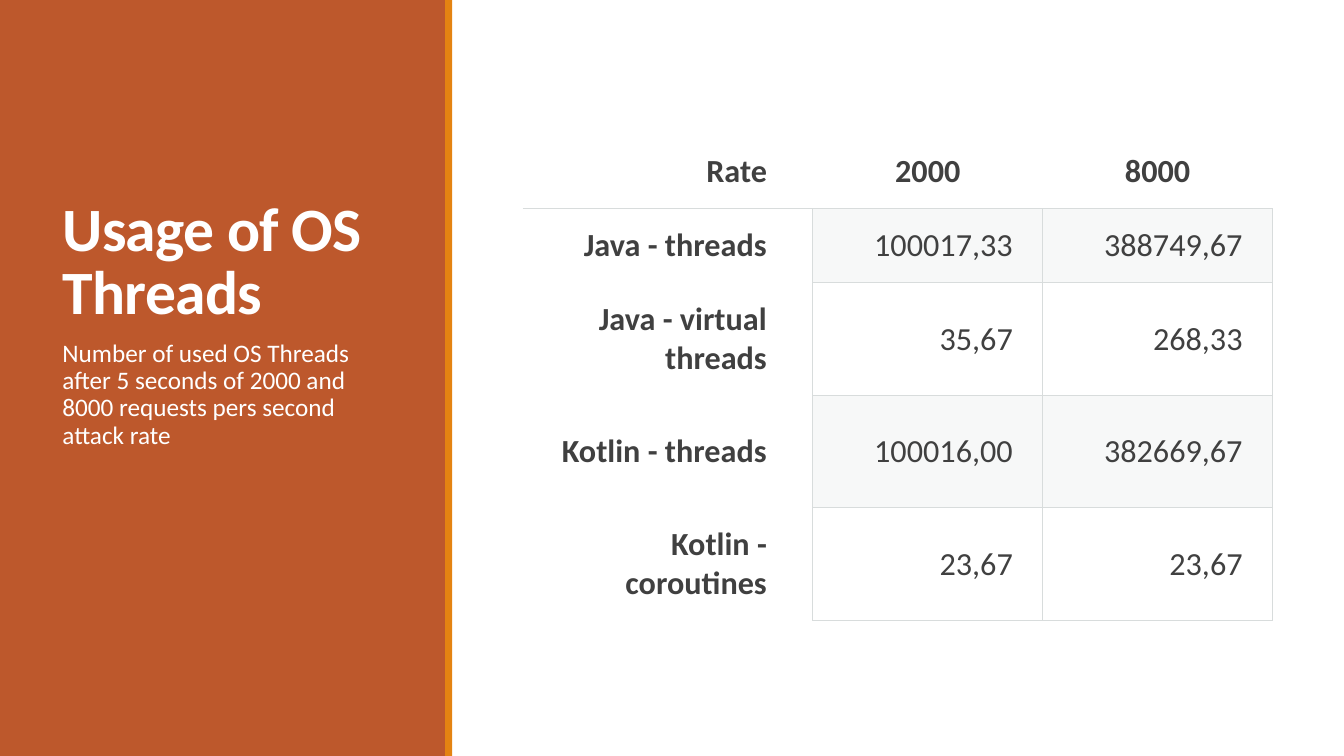
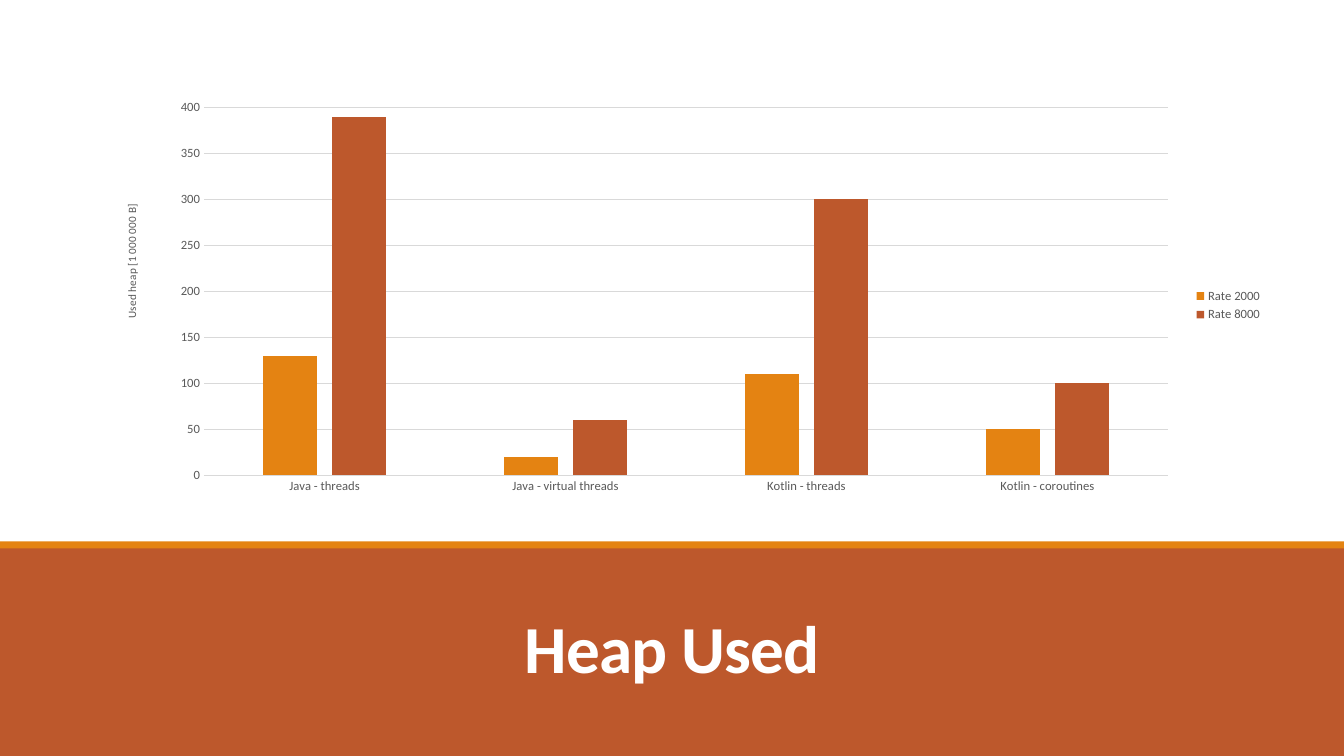
from pptx import Presentation
from pptx.chart.data import CategoryChartData
from pptx.dml.color import RGBColor
from pptx.enum.chart import XL_CHART_TYPE, XL_LEGEND_POSITION, XL_TICK_MARK
from pptx.enum.shapes import MSO_SHAPE
from pptx.enum.text import MSO_ANCHOR, MSO_AUTO_SIZE, PP_ALIGN
from pptx.oxml import parse_xml
from pptx.oxml.ns import nsdecls, qn
from pptx.util import Inches, Pt

RECTANGLE = MSO_SHAPE.RECTANGLE
COLUMNS = XL_CHART_TYPE.COLUMN_CLUSTERED
LEGEND_RIGHT = XL_LEGEND_POSITION.RIGHT
NO_TICKS = XL_TICK_MARK.NONE
LEFT, CENTER, RIGHT = PP_ALIGN.LEFT, PP_ALIGN.CENTER, PP_ALIGN.RIGHT
TOP, MIDDLE, BOTTOM = MSO_ANCHOR.TOP, MSO_ANCHOR.MIDDLE, MSO_ANCHOR.BOTTOM
FIXED_SIZE = MSO_AUTO_SIZE.NONE

TITLE_ONLY, TITLE_AND_BODY = 5, 1
FONT = "Calibri"
COLORS = {
    "band": "BD582C",
    "accent": "E48312",
    "white": "FFFFFF",
    "text": "404040",
    "stripe": "F7F8F8",
    "border": "D8DCDC",
    "grid": "D9D9D9",
    "label": "595959",
}


def rgb(name):
    return RGBColor.from_string(COLORS[name])


def style_font(font, size, color, bold=False):
    font.name, font.size, font.bold = FONT, Pt(size), bold
    font.color.rgb = rgb(color)


def style_line(line, color):
    line.color.rgb = rgb(color)
    line.width = Pt(0.75)


def set_borders(cell, sides):
    """Draw the sides named by the letters L, R, T, B and clear the others."""
    properties = cell._tc.get_or_add_tcPr()
    for index, side in enumerate("LRTB"):
        paint = "<a:noFill/>"
        if side in sides:
            paint = f'<a:solidFill><a:srgbClr val="{COLORS["border"]}"/></a:solidFill>'
        properties.insert(index, parse_xml(
            f'<a:ln{side} {nsdecls("a")} w="{Pt(0.75)}">{paint}</a:ln{side}>'))


def set_layout(parent, index, inner=False, **percents):
    """Fix a chart part at percents (x, y, w, h) of the chart's size."""
    layout = parent.find(qn("c:layout"))
    if layout is not None:
        parent.remove(layout)
    target = '<c:layoutTarget val="inner"/>' if inner else ""
    modes = "".join(f'<c:{key}Mode val="edge"/>' for key in "xy")
    values = "".join(f'<c:{key} val="{percent / 100:.4f}"/>'
                     for key, percent in percents.items())
    parent.insert(index, parse_xml(
        f'<c:layout {nsdecls("c")}><c:manualLayout>{target}{modes}{values}'
        "</c:manualLayout></c:layout>"))


class Deck:
    """Style and current slide; every box is (left, top, width, height) in percent."""

    def __init__(self):
        self.presentation = Presentation()
        self.presentation.slide_width = Inches(13.33)
        self.presentation.slide_height = Inches(7.5)
        self.slide = None

    def across(self, percent):
        return round(self.presentation.slide_width * percent / 100)

    def down(self, percent):
        return round(self.presentation.slide_height * percent / 100)

    def box(self, left, top, width, height):
        return self.across(left), self.down(top), self.across(width), self.down(height)

    def new_slide(self, layout):
        layouts = self.presentation.slide_layouts
        self.slide = self.presentation.slides.add_slide(layouts[layout])

    def band(self, box, color):
        band = self.slide.shapes.add_shape(RECTANGLE, *self.box(*box))
        band.shadow.inherit = False
        band.fill.solid()
        band.fill.fore_color.rgb = rgb(color)
        band.line.fill.background()

    def fill_placeholder(self, placeholder, box, text, size, anchor, align, bold):
        """Place a placeholder in front of the bands and write its one paragraph."""
        placeholder.left, placeholder.top, placeholder.width, placeholder.height = self.box(*box)
        self.slide.shapes._spTree.append(placeholder._element)
        frame = placeholder.text_frame
        frame.word_wrap, frame.auto_size = True, FIXED_SIZE
        frame.vertical_anchor = anchor
        paragraph = frame.paragraphs[0]
        paragraph.alignment = align
        run = paragraph.add_run()
        run.text = text
        style_font(run.font, size, "white", bold)
        return frame, paragraph, run

    def title(self, box, text, size, align):
        _, paragraph, run = self.fill_placeholder(
            self.slide.shapes.title, box, text, size, BOTTOM, align, True)
        paragraph.line_spacing = 0.85
        paragraph.space_before = Pt(0)
        run.font._element.set("spc", "-50")

    def body(self, box, text, size):
        frame, paragraph, _ = self.fill_placeholder(
            self.slide.placeholders[1], box, text, size, TOP, LEFT, False)
        frame.margin_left = frame.margin_right = 0
        paragraph.line_spacing = 0.9
        paragraph.space_before, paragraph.space_after = Pt(12), Pt(2)
        properties = paragraph._p.get_or_add_pPr()
        properties.set("marL", str(Inches(0.1)))
        properties.set("indent", "0")
        properties.append(parse_xml(f'<a:buNone {nsdecls("a")}/>'))

    def table(self, left, top, widths, heights, rows):
        box = self.box(left, top, sum(widths), sum(heights))
        table = self.slide.shapes.add_table(len(rows), len(widths), *box).table
        table.first_row = table.horz_banding = False
        for column, width in zip(table.columns, widths):
            column.width = self.across(width)
        for row, height in zip(table.rows, heights):
            row.height = self.down(height)
        for row_index, row in enumerate(rows):
            for column_index, text in enumerate(row):
                self.table_cell(table.cell(row_index, column_index), text,
                                row_index, column_index)

    def table_cell(self, cell, text, row, column):
        is_header, is_label = row == 0, column == 0
        cell.margin_left = Inches(0.3)
        cell.margin_right = Inches(0.45 if is_label else 0.29)
        cell.margin_top = cell.margin_bottom = Inches(0.15)
        cell.vertical_anchor = MIDDLE
        paragraph = cell.text_frame.paragraphs[0]
        paragraph.alignment = CENTER if is_header and not is_label else RIGHT
        run = paragraph.add_run()
        run.text = text
        style_font(run.font, 23, "text", is_header or is_label)
        striped = row % 2 == 1 and not is_label
        cell.fill.solid()
        cell.fill.fore_color.rgb = rgb("stripe" if striped else "white")
        if is_header:
            sides = "B"
        elif is_label:
            sides = "TR" if row == 1 else "R"
        else:
            sides = "LRTB"
        set_borders(cell, sides)

    def column_chart(self, box, categories, series, axis_title):
        """series maps each name to its values and colour."""
        data = CategoryChartData(number_format="0")
        data.categories = categories
        for name, (values, _) in series.items():
            data.add_series(name, values)
        chart = self.slide.shapes.add_chart(COLUMNS, *self.box(*box), data).chart
        chart.has_title = False
        style_font(chart.font, 9, "label")

        plot = chart.plots[0]
        plot.gap_width, plot.overlap, plot.vary_by_categories = 219, -27, False
        for bars, (_, color) in zip(plot.series, series.values()):
            bars.format.fill.solid()
            bars.format.fill.fore_color.rgb = rgb(color)
        set_layout(chart._chartSpace.chart.plotArea, 0, inner=True,
                   x=11.1, y=7.9, w=80.2, h=78.3)

        chart.has_legend = True
        chart.legend.position = LEGEND_RIGHT
        chart.legend.include_in_layout = False
        style_font(chart.legend.font, 9, "label")

        for axis in (chart.category_axis, chart.value_axis):
            axis.major_tick_mark = axis.minor_tick_mark = NO_TICKS
            style_font(axis.tick_labels.font, 9, "label")
        style_line(chart.category_axis.format.line, "grid")
        self.value_axis(chart.value_axis, axis_title)

    def value_axis(self, axis, title):
        axis.minimum_scale, axis.maximum_scale, axis.major_unit = 0, 400, 50
        axis.format.line.fill.background()
        axis.has_major_gridlines = True
        style_line(axis.major_gridlines.format.line, "grid")
        frame = axis.axis_title.text_frame
        run = frame.paragraphs[0].add_run()
        run.text = title
        style_font(run.font, 8, "label")
        frame._txBody.bodyPr.set("rot", "-5400000")
        frame._txBody.bodyPr.set("vert", "horz")
        set_layout(axis.axis_title._element, 1, x=4.3, y=28)


def threads_slide(deck):
    deck.new_slide(TITLE_AND_BODY)
    deck.band((0, 0, 33.23, 100), "band")
    deck.band((33.12, 0, 0.53, 100), "accent")
    deck.title((3.9, 13.2, 25.28, 30.67), "Usage of OS Threads", 44, LEFT)
    deck.body((3.9, 44.4, 25.28, 48.67),
              "Number of used OS Threads after 5 seconds of 2000 and "
              "8000 requests pers second attack rate", 18)
    deck.table(38.9, 17.8, [21.55, 17.1, 17.1], [9.8] * 2 + [14.9] * 3, [
        ["Rate", "2000", "8000"],
        ["Java - threads", "100017,33", "388749,67"],
        ["Java - virtual threads", "35,67", "268,33"],
        ["Kotlin - threads", "100016,00", "382669,67"],
        ["Kotlin - coroutines", "23,67", "23,67"],
    ])


def heap_slide(deck):
    deck.new_slide(TITLE_ONLY)
    deck.band((0, 72.27, 100, 27.73), "band")
    deck.band((0, 71.6, 100, 0.93), "accent")
    deck.title((8.75, 76.53, 82.52, 15.07), "Heap Used", 48, CENTER)
    deck.column_chart(
        (5.25, 9.33, 89.42, 62.13),
        ["Java - threads", "Java - virtual threads",
         "Kotlin - threads", "Kotlin - coroutines"],
        {"Rate 2000": ([130, 20, 110, 50], "accent"),
         "Rate 8000": ([390, 60, 300, 100], "band")},
        "Used heap [1 000 000 B]")


def main():
    deck = Deck()
    threads_slide(deck)
    heap_slide(deck)
    deck.presentation.save("out.pptx")


if __name__ == "__main__":
    main()
